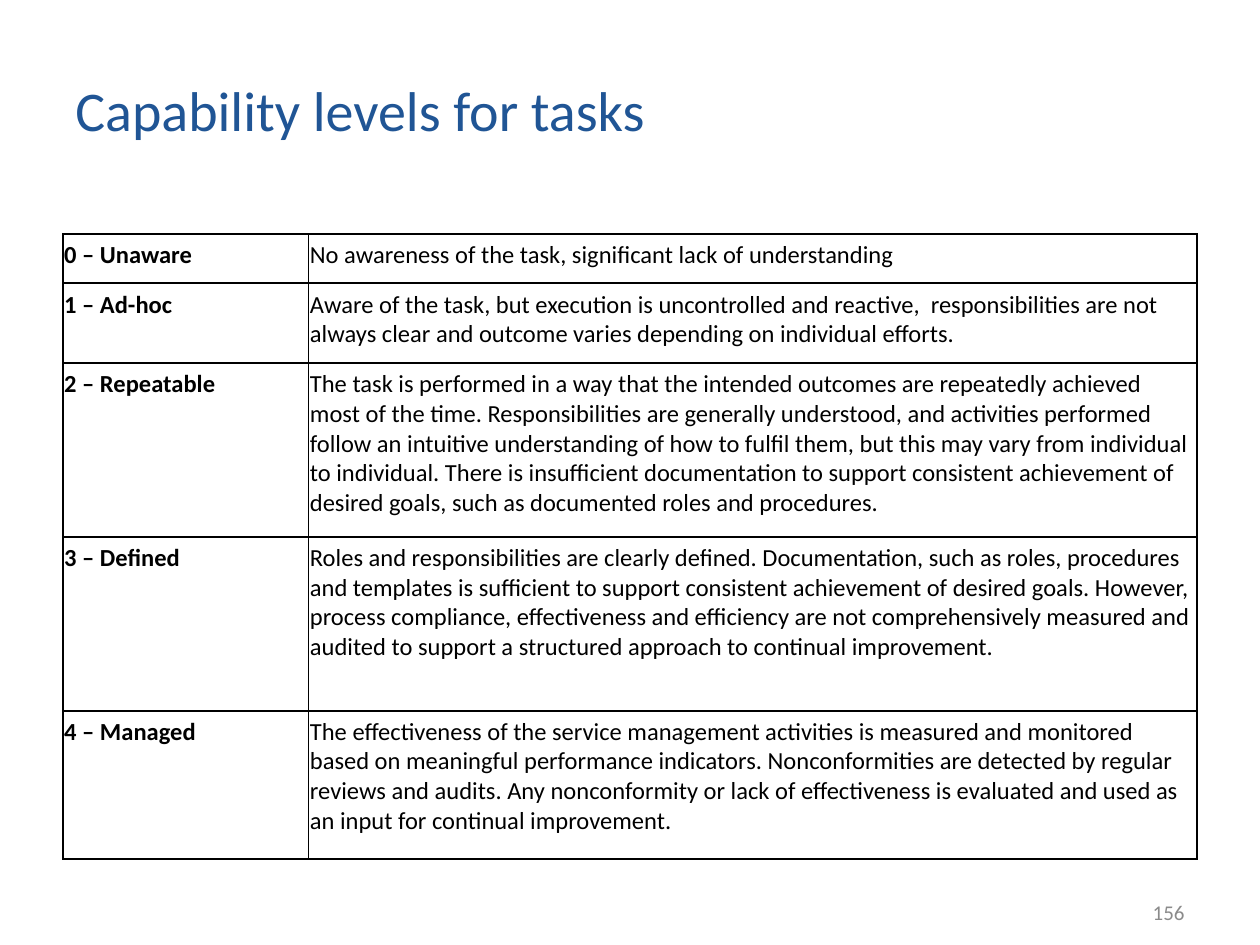
from dataclasses import dataclass

from lxml import etree
from pptx import Presentation
from pptx import util as u
from pptx.dml.color import RGBColor
from pptx.enum import text
from pptx.oxml import ns

WIDTH, HEIGHT = u.Inches(10), u.Inches(7.5)


@dataclass(frozen=True)
class Theme:
    font: str = "Calibri"
    title: str = "205595"
    body: str = "000000"
    number: str = "8B8B8B"
    paper: str = "FFFFFF"
    title_size: int = 32
    body_size: int = 14
    number_size: int = 12
    rule: float = 1.25
    thin_rule: float = 0.75


THEME = Theme()
MARGIN = 0.05
CONTENT = 1 - 2 * MARGIN
COLUMNS = [1.95, 7.05]
ROWS = [0.39, 0.63, 1.38, 1.38, 1.18]
LEVELS = [
    ("0 – Unaware",
     "No awareness of the task, significant lack of understanding"),
    ("1 – Ad-hoc",
     "Aware of the task, but execution is uncontrolled and reactive,  "
     "responsibilities are not always clear and outcome varies depending on "
     "individual efforts."),
    ("2 – Repeatable",
     "The task is performed in a way that the intended outcomes are repeatedly "
     "achieved most of the time. Responsibilities are generally understood, and "
     "activities performed follow an intuitive understanding of how to fulfil "
     "them, but this may vary from individual to individual. There is "
     "insufficient documentation to support consistent achievement of desired "
     "goals, such as documented roles and procedures."),
    ("3 – Defined",
     "Roles and responsibilities are clearly defined. Documentation, such as "
     "roles, procedures and templates is sufficient to support consistent "
     "achievement of desired goals. However, process compliance, effectiveness "
     "and efficiency are not comprehensively measured and audited to support a "
     "structured approach to continual improvement."),
    ("4 – Managed",
     "The effectiveness of the service management activities is measured and "
     "monitored based on meaningful performance indicators. Nonconformities are "
     "detected by regular reviews and audits. Any nonconformity or lack of "
     "effectiveness is evaluated and used as an input for continual "
     "improvement."),
]


def place(left, top, width, height):
    """Turn shares of the slide into lengths."""
    return (int(left * WIDTH), int(top * HEIGHT),
            int(width * WIDTH), int(height * HEIGHT))


def add_run(p, words, size, color, bold=False):
    r = p.add_run()
    r.text = words
    r.font.name = THEME.font
    r.font.size = u.Pt(size)
    r.font.bold = bold
    r.font.color.rgb = RGBColor.from_string(color)


def add_label(s, box, words, size, color, align=text.PP_ALIGN.LEFT):
    tf = s.shapes.add_textbox(*place(*box)).text_frame
    tf.word_wrap = True
    tf.vertical_anchor = text.MSO_ANCHOR.MIDDLE
    p = tf.paragraphs[0]
    p.alignment = align
    add_run(p, words, size, color)


def set_borders(cell, widths):
    """Draw the left, right, top and bottom rules, ahead of the cell's fill."""
    tc_pr = cell._tc.get_or_add_tcPr()
    for i, (side, width) in enumerate(zip("LRTB", widths)):
        ln = etree.Element(ns.qn(f"a:ln{side}"), w=str(u.Pt(width)))
        fill = etree.SubElement(ln, ns.qn("a:solidFill"))
        etree.SubElement(fill, ns.qn("a:srgbClr"), val=THEME.body)
        tc_pr.insert(i, ln)


def fill_cell(cell, words, is_level):
    cell.margin_left = cell.margin_right = u.Inches(0.01)
    cell.margin_top = cell.margin_bottom = u.Inches(0.05)
    cell.fill.solid()
    cell.fill.fore_color.rgb = RGBColor.from_string(THEME.paper)
    add_run(cell.text_frame.paragraphs[0], words,
            THEME.body_size, THEME.body, is_level)
    rule, thin = THEME.rule, THEME.thin_rule
    sides = (rule, thin) if is_level else (thin, rule)
    set_borders(cell, (*sides, rule, rule))


def add_levels_table(s, box):
    table = s.shapes.add_table(len(ROWS), len(COLUMNS), *place(*box)).table
    table.first_row = table.horz_banding = False
    for column, width in zip(table.columns, COLUMNS):
        column.width = u.Inches(width)
    for row, height, level in zip(table.rows, ROWS, LEVELS):
        row.height = u.Inches(height)
        for i, words in enumerate(level):
            fill_cell(row.cells[i], words, is_level=i == 0)


def main():
    prs = Presentation()
    prs.slide_width, prs.slide_height = WIDTH, HEIGHT
    s = prs.slides.add_slide(prs.slide_layouts[6])
    add_label(s, (MARGIN, 0.04, 0.8, 0.15), "Capability levels for tasks",
              THEME.title_size, THEME.title)
    add_levels_table(s, (MARGIN, 0.248, CONTENT, 0.66))
    number_width = 0.23
    add_label(s, (1 - MARGIN - number_width, 0.94, number_width, 0.05), "156",
              THEME.number_size, THEME.number, text.PP_ALIGN.RIGHT)
    prs.save("out.pptx")


if __name__ == "__main__":
    main()
